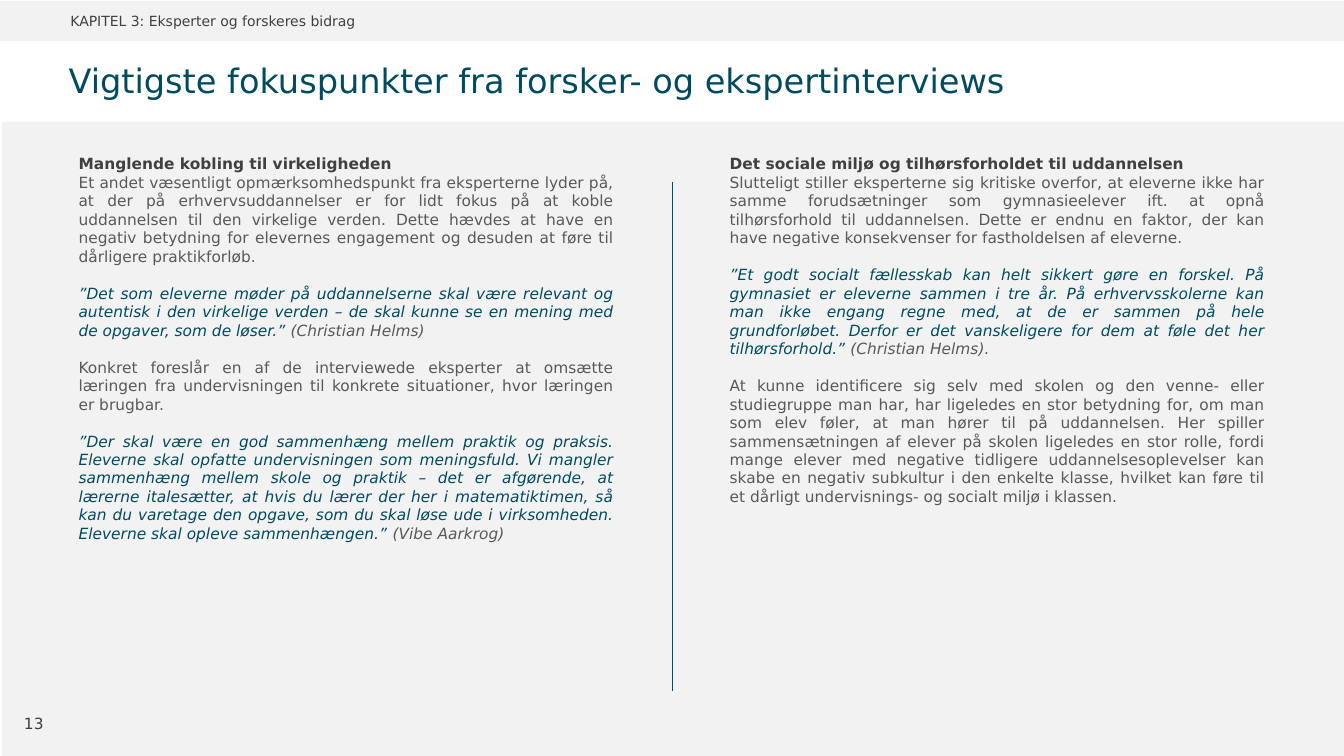
from lxml import etree
from pptx import Presentation
from pptx.dml.color import RGBColor
from pptx.enum.shapes import MSO_CONNECTOR, MSO_SHAPE
from pptx.enum.text import MSO_ANCHOR, PP_ALIGN
from pptx.oxml.ns import qn
from pptx.util import Pt

RECT = MSO_SHAPE.RECTANGLE
STRAIGHT = MSO_CONNECTOR.STRAIGHT
TOP, MIDDLE = MSO_ANCHOR.TOP, MSO_ANCHOR.MIDDLE
LEFT, CENTER, JUSTIFY = PP_ALIGN.LEFT, PP_ALIGN.CENTER, PP_ALIGN.JUSTIFY

PANEL = RGBColor(0xF2, 0xF2, 0xF2)
TEAL = RGBColor(0x00, 0x4B, 0x60)
DARK = RGBColor(0x40, 0x40, 0x40)
GREY = RGBColor(0x59, 0x59, 0x59)

FONT = "DejaVu Sans"
LINE_GAP = 13.2

HEADING = {"size": 11, "color": DARK, "bold": True}
BODY = {"size": 11, "color": GREY}
QUOTE = {"size": 11, "color": TEAL, "italic": True}
SPEAKER = {"size": 11, "color": GREY, "italic": True}
CHAPTER = {"size": 10, "color": DARK}
TITLE = {"size": 24, "color": TEAL}
NUMBER = {"size": 11, "color": DARK}

COLUMN_TOP, COLUMN_WIDTH, COLUMN_HEIGHT = 106.6, 396.7, 375

REALITY = [
    [("Manglende kobling til virkeligheden", HEADING)],
    [("Et andet væsentligt opmærksomhedspunkt fra eksperterne lyder på, at der på "
      "erhvervsuddannelser er for lidt fokus på at koble uddannelsen til den virkelige "
      "verden. Dette hævdes at have en negativ betydning for elevernes engagement og "
      "desuden at føre til dårligere praktikforløb.", BODY)],
    [("”Det som eleverne møder på uddannelserne skal være relevant og autentisk i den "
      "virkelige verden – de skal kunne se en mening med de opgaver, som de løser.” ", QUOTE),
     ("(Christian Helms)", SPEAKER)],
    [("Konkret foreslår en af de interviewede eksperter at omsætte læringen fra "
      "undervisningen til konkrete situationer, hvor læringen er brugbar.", BODY)],
    [("”Der skal være en god sammenhæng mellem praktik og praksis. Eleverne skal opfatte "
      "undervisningen som meningsfuld. Vi mangler sammenhæng mellem skole og praktik – det "
      "er afgørende, at lærerne italesætter, at hvis du lærer der her i matematiktimen, så "
      "kan du varetage den opgave, som du skal løse ude i virksomheden. Eleverne skal "
      "opleve sammenhængen.” ", QUOTE),
     ("(Vibe Aarkrog)", SPEAKER)],
]

BELONGING = [
    [("Det sociale miljø og tilhørsforholdet til uddannelsen", HEADING)],
    [("Slutteligt stiller eksperterne sig kritiske overfor, at eleverne ikke har samme "
      "forudsætninger som gymnasieelever ift. at opnå tilhørsforhold til uddannelsen. "
      "Dette er endnu en faktor, der kan have negative konsekvenser for fastholdelsen af "
      "eleverne.", BODY)],
    [("”Et godt socialt fællesskab kan helt sikkert gøre en forskel. På gymnasiet er "
      "eleverne sammen i tre år. På erhvervsskolerne kan man ikke engang regne med, at de "
      "er sammen på hele grundforløbet. Derfor er det vanskeligere for dem at føle det her "
      "tilhørsforhold.” ", QUOTE),
     ("(Christian Helms).", SPEAKER)],
    [("At kunne identificere sig selv med skolen og den venne- eller studiegruppe man har, "
      "har ligeledes en stor betydning for, om man som elev føler, at man hører til på "
      "uddannelsen. Her spiller sammensætningen af elever på skolen ligeledes en stor "
      "rolle, fordi mange elever med negative tidligere uddannelsesoplevelser kan skabe en "
      "negativ subkultur i den enkelte klasse, hvilket kan føre til et dårligt "
      "undervisnings- og socialt miljø i klassen.", BODY)],
]


def add_panel(s, left, top, width, height):
    sp = s.shapes.add_shape(RECT, Pt(left), Pt(top), Pt(width), Pt(height))
    sp.shadow.inherit = False
    sp.fill.solid()
    sp.fill.fore_color.rgb = PANEL
    sp.line.fill.background()


def add_divider(s, x, top, bottom):
    line = s.shapes.add_connector(STRAIGHT, Pt(x), Pt(top), Pt(x), Pt(bottom))
    line.line.color.rgb = TEAL
    line.line.width = Pt(0.5)
    etree.SubElement(line._element.spPr, qn("a:effectLst"))


def add_run(p, text, style):
    r = p.add_run()
    r.text = text
    r.font.name = FONT
    for name, value in style.items():
        if name == "color":
            r.font.color.rgb = value
        else:
            setattr(r.font, name, Pt(value) if name == "size" else value)


def add_text(s, left, top, width, height, paragraphs, align=LEFT, anchor=MIDDLE):
    tf = s.shapes.add_textbox(Pt(left), Pt(top), Pt(width), Pt(height)).text_frame
    tf.word_wrap = True
    tf.vertical_anchor = anchor
    for i, runs in enumerate(paragraphs):
        p = tf.add_paragraph() if i else tf.paragraphs[0]
        p.alignment = align
        if i > 1:
            p.space_before = Pt(LINE_GAP)
        for text, style in runs:
            add_run(p, text, style)
    return tf


def add_title(s, text):
    tf = add_text(s, 49, 30.2, 856, 56.9, [[(text, TITLE)]])
    tf.paragraphs[0].line_spacing = 0.9
    for side in ("left", "top", "right", "bottom"):
        setattr(tf, f"margin_{side}", 0)


def main():
    prs = Presentation()
    prs.slide_width, prs.slide_height = Pt(960), Pt(540)
    s = prs.slides.add_slide(prs.slide_layouts[6])
    add_panel(s, 0, 0.7, 960, 28.8)
    add_panel(s, 1.4, 87.1, 958.6, 452.9)
    add_text(s, 43.2, 0, 410.4, 29.5,
             [[("KAPITEL 3: Eksperter og forskeres bidrag", CHAPTER)]])
    add_title(s, "Vigtigste fokuspunkter fra forsker- og ekspertinterviews")
    for left, paragraphs in ((49, REALITY), (514.1, BELONGING)):
        add_text(s, left, COLUMN_TOP, COLUMN_WIDTH, COLUMN_HEIGHT, paragraphs, JUSTIFY, TOP)
    add_divider(s, 480.2, 130.3, 493.9)
    add_text(s, 6.5, 502.6, 35.3, 28.8, [[("13", NUMBER)]], CENTER)
    prs.save("out.pptx")


if __name__ == "__main__":
    main()
